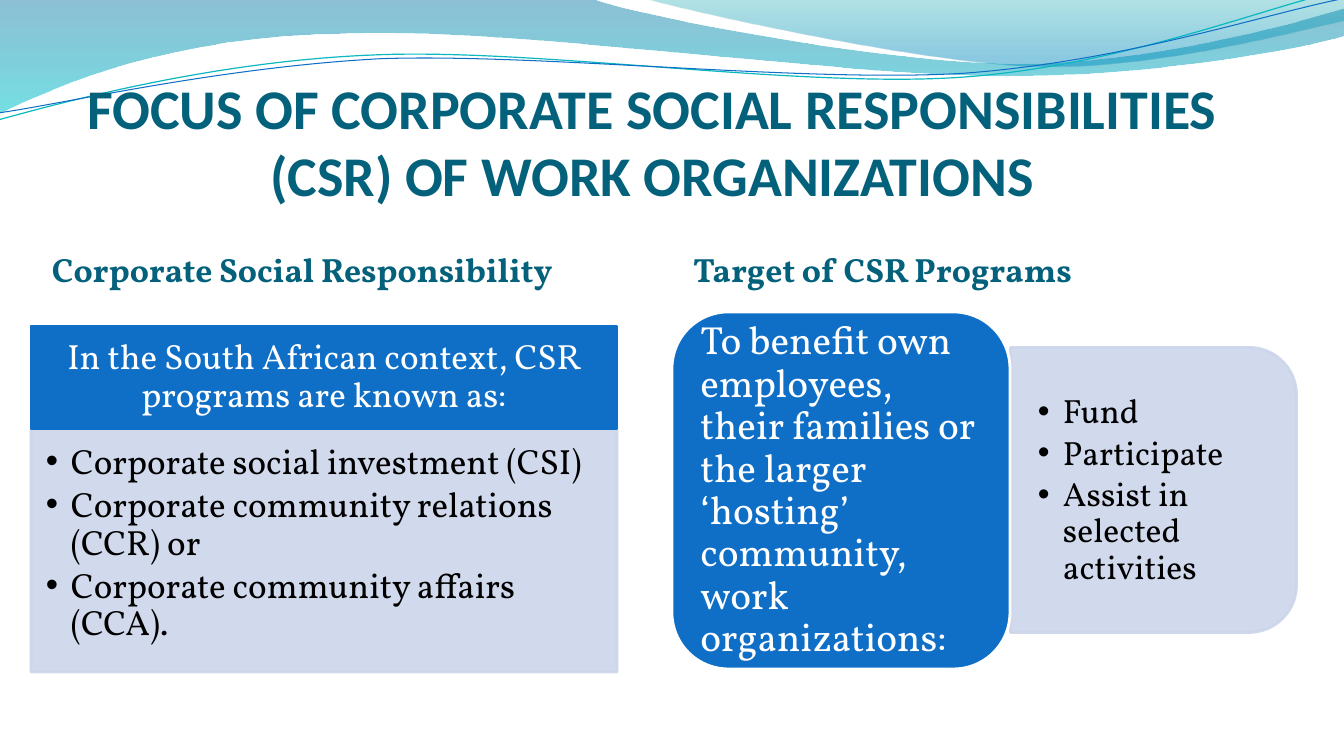
from lxml.etree import SubElement
from pptx import Presentation
from pptx.dml.color import RGBColor
from pptx.enum.shapes import MSO_SHAPE
from pptx.enum.text import MSO_ANCHOR, MSO_AUTO_SIZE, PP_ALIGN
from pptx.oxml.ns import qn
from pptx.util import Pt

# Content
TITLE = "FOCUS OF CORPORATE SOCIAL RESPONSIBILITIES (CSR) OF WORK ORGANIZATIONS"
HEADS = ["Corporate Social Responsibility", "Target of CSR Programs"]
INTRO = "In the South African context, CSR programs are known as:"
NAMES = ["Corporate social investment (CSI)",
         "Corporate community relations (CCR) or",
         "Corporate community affairs (CCA)."]
GOAL = ("To benefit own employees, their families or the larger "
        "‘hosting’ community, work organizations:")
ACTS = ["Fund", "Participate", "Assist in selected activities"]

COLORS = {"title": "04617B", "blue": "0F6FC6", "pale": "CCD5EA",
          "white": "FFFFFF", "black": "000000", "teal": "0AB8BF",
          "sea": "0074A1", "aqua": "00C6CF", "mint": "00A1A9", "sky": "008BBF"}
SERIF = "Vollkorn"

# Waves in px: a start point, then lines (2 numbers) or curves (6 numbers)
BANDS = [
    ([(0, 0), (592, -1), (639, 17, 892, 64, 1019, 64),
      (1147, 64, 1288, 26, 1344, 9), (1346, 36),
      (1322, 44, 1169, 77, 1002, 76), (836, 76, 513, 28, 346, 34),
      (173, 36, 61, 84, -1, 114)],
     [(0, "sea", 45), (1, "aqua", 55)]),
    ([(644, -1), (684, 11, 916, 62, 1033, 66),
      (1150, 70, 1292, 32, 1344, 21), (1344, 0)],
     [(0, "mint", 30), (0.8, "sky", 45)]),
]
STROKES = [
    ([(-3, 88), (64, 73, 213, 40, 372, 41), (532, 41, 794, 94, 957, 91),
      (1118, 88, 1264, 36, 1344, 22)], "teal", 0.85),
    ([(-2, 81), (63, 75, 220, 46, 381, 45), (541, 47, 801, 89, 962, 87),
      (1123, 83, 1266, 42, 1347, 30)], "blue", 0.75),
]
TILT = -2.7
WIDE = 1344

deck = Presentation()
deck.slide_width, deck.slide_height = 12192000, 6858000
SCALE = deck.slide_width / WIDE


def emu(px):
    return round(px * SCALE)


def rgb(name):
    return RGBColor.from_string(COLORS[name])


def place(shape, box):
    shape.left, shape.top, shape.width, shape.height = map(emu, box)


def fade(shape, alphas):
    """Set the opacity of each colour in the shape, fill before line."""
    for color, part in zip(shape.element.spPr.iter(qn("a:srgbClr")), alphas):
        SubElement(color, qn("a:alpha")).set("val", str(part * 1000))


def paint(shape, fill, line):
    shape.fill.solid()
    shape.fill.fore_color.rgb = rgb(fill)
    shape.line.color.rgb = rgb(line)
    shape.line.width = Pt(2)


def block(kind, box, fill, line):
    shape = slide.shapes.add_shape(kind, *map(emu, box))
    shape.shadow.inherit = False
    paint(shape, fill, line)
    return shape


def write(shape, lines, size, color, inset, font=SERIF, bold=False,
          align=PP_ALIGN.LEFT, anchor=MSO_ANCHOR.MIDDLE, pitch=None, dots=False):
    frame = shape.text_frame
    frame.word_wrap = True
    frame.auto_size = MSO_AUTO_SIZE.NONE
    frame.vertical_anchor = anchor
    (frame.margin_left, frame.margin_top,
     frame.margin_right, frame.margin_bottom) = map(emu, inset)
    for i, line in enumerate(lines):
        para = frame.add_paragraph() if i else frame.paragraphs[0]
        para.alignment = align
        if pitch:
            para.line_spacing = pitch
            para.space_before = Pt(0)
        if dots:
            para.space_after = Pt(size * 0.15)
            props = para._p.get_or_add_pPr()
            props.set("marL", str(emu(25)))
            props.set("indent", str(emu(-25)))
            SubElement(props, qn("a:buFont")).set("typeface", "Arial")
            SubElement(props, qn("a:buChar")).set("char", "•")
        run = para.add_run()
        run.text = line
        run.font.name, run.font.size, run.font.bold = font, Pt(size), bold
        run.font.color.rgb = rgb(color)


def wave(route, close):
    """Lay a freeform through all points, then bend each leg of three."""
    first, *legs = route
    pen = slide.shapes.build_freeform(*map(emu, first))
    for leg in legs:
        pen.add_line_segments([(emu(x), emu(y)) for x, y in
                               zip(leg[::2], leg[1::2])], close=False)
    if close:
        pen.add_line_segments([], close=True)
    shape = pen.convert_to_shape()
    shape.shadow.inherit = False
    track = next(shape.element.iter(qn("a:path")))
    sides = iter(track.findall(qn("a:lnTo")))
    for leg in legs:
        group = [next(sides) for _ in leg[::2]]
        if len(group) == 3:
            bend = SubElement(track, qn("a:cubicBezTo"))
            group[0].addprevious(bend)
            for side in group:
                bend.append(side[0])
                track.remove(side)
    title.element.addprevious(shape.element)
    return shape


# Comparison layout: title, then a heading and a list on each side
slide = deck.slides.add_slide(deck.slide_layouts[4])
title, head1, list1, head2, list2 = slide.placeholders

# Waves behind the title
for route, stops in BANDS:
    band = wave(route, True)
    band.line.fill.background()
    band.fill.gradient()
    band.fill.gradient_angle = 270
    for stop, (spot, color, _) in zip(band.fill.gradient_stops, stops):
        stop.position = spot
        stop.color.rgb = rgb(color)
    fade(band, [part for _, _, part in stops])
for route, color, width in STROKES:
    curve = wave(route, False)
    curve.rotation = TILT
    curve.fill.background()
    curve.line.color.rgb = rgb(color)
    curve.line.width = Pt(width)

# Title and headings
place(title, (47, 35, 1210, 173))
write(title, [TITLE], 40, "title", (0, 5, 0, 0), "Calibri", True,
      PP_ALIGN.CENTER, MSO_ANCHOR.BOTTOM)
for head, text, left, width in zip((head1, head2), HEADS, (47, 688), (585, 629)):
    place(head, (left, 227, width, 85))
    write(head, [text], 24, "title", (5, 0, 5, 0), bold=True)

# Left side: banner over list
banner = block(MSO_SHAPE.RECTANGLE, (31, 326, 586, 103), "blue", "blue")
write(banner, [INTRO], 25, "white", (19, 11, 19, 11),
      align=PP_ALIGN.CENTER, pitch=0.9)
place(list1, (31, 429, 586, 243))
paint(list1, "pale", "pale")
fade(list1, (90, 90))
write(list1, NAMES, 25, "black", (15, 15, 19, 22),
      anchor=MSO_ANCHOR.TOP, pitch=0.9, dots=True)

# Right side: panel behind list, then card
panel = block(MSO_SHAPE.ROUND_2_SAME_RECTANGLE, (1011, 347, 285, 286),
              "pale", "pale")
panel.rotation = 90
fade(panel, (90, 90))
list2.element.addprevious(panel.element)
place(list2, (1011, 362, 272, 257))
write(list2, ACTS, 24, "black", (27, 14, 27, 14), pitch=0.9, dots=True)
card = block(MSO_SHAPE.ROUNDED_RECTANGLE, (672, 312, 338, 357), "blue", "white")
write(card, [GOAL], 28, "white", (12, 6, 12, 6), pitch=0.9)

deck.save("out.pptx")
